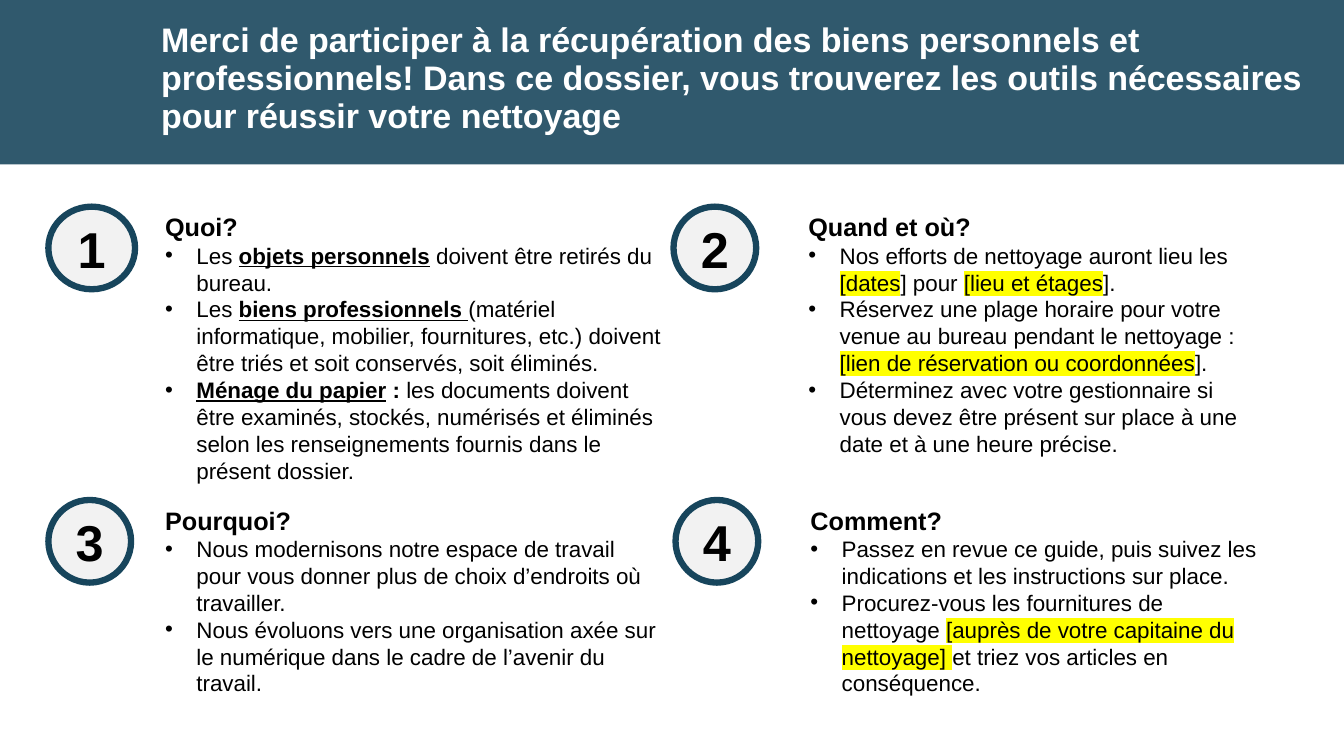
from lxml import etree
from pptx import Presentation
from pptx.dml.color import RGBColor
from pptx.enum.shapes import MSO_SHAPE
from pptx.enum.text import MSO_ANCHOR, MSO_AUTO_SIZE, PP_ALIGN
from pptx.oxml.ns import qn
from pptx.util import Inches, Pt

RECT, OVAL = MSO_SHAPE.RECTANGLE, MSO_SHAPE.OVAL
MIDDLE, TOP = MSO_ANCHOR.MIDDLE, MSO_ANCHOR.TOP
CENTER, GROW = PP_ALIGN.CENTER, MSO_AUTO_SIZE.SHAPE_TO_FIT_TEXT

TEAL = RGBColor(0x17, 0x45, 0x5C)
PALE = RGBColor(0xF2, 0xF2, 0xF2)
WHITE = RGBColor(0xFF, 0xFF, 0xFF)
BLACK = RGBColor(0x00, 0x00, 0x00)
YELLOW = RGBColor(0xFF, 0xFF, 0x00)

# Text formats
BANNER = {"size": Pt(24.3), "bold": True}
NUMBER = {"size": Pt(36), "bold": True}
HEAD = {"size": Pt(18), "bold": True}
BODY = {"size": Pt(16), "bold": False}
STRONG = {"size": Pt(16), "bold": True}
KEY = {"size": Pt(16), "bold": True, "underline": True}
MARK = {"size": Pt(16), "bold": False, "mark": True}

TITLE = ("Merci de participer à la récupération des biens personnels et "
         "professionnels! Dans ce dossier, vous trouverez les outils "
         "nécessaires pour réussir votre nettoyage")

# Number, circle (left, width), text (left, width, height), top, heading, bullets
PARTS = [
    ("1", (0.48, 0.86), (1.54, 5.16, 2.83), 2.05, "Quoi?", [
        [("Les ", BODY), ("objets personnels", KEY),
         (" doivent être retirés du bureau.", BODY)],
        [("Les ", BODY), ("biens professionnels ", KEY),
         ("(matériel informatique, mobilier, fournitures, etc.) doivent "
          "être triés et soit conservés, soit éliminés.", BODY)],
        [("Ménage du papier", KEY), (" :", STRONG),
         (" les documents doivent être examinés, stockés, numérisés et "
          "éliminés selon les renseignements fournis dans le présent "
          "dossier.", BODY)],
    ]),
    ("2", (6.68, 0.82), (7.92, 4.67, 2.83), 2.05, "Quand et où?", [
        [("Nos efforts de nettoyage auront lieu les ", BODY),
         ("[dates", MARK), ("] pour ", BODY),
         ("[lieu et étages", MARK), ("].", BODY)],
        [("Réservez une plage horaire pour votre venue au bureau pendant "
          "le nettoyage : ", BODY),
         ("[lien de réservation ou coordonnées", MARK), ("].", BODY)],
        [("Déterminez avec votre gestionnaire si vous devez être présent "
          "sur place à une date et à une heure précise.", BODY)],
    ]),
    ("3", (0.48, 0.82), (1.54, 5.1, 2.02), 4.96, "Pourquoi?", [
        [("Nous modernisons notre espace de travail pour vous donner plus "
          "de choix d’endroits où travailler.", BODY)],
        [("Nous évoluons vers une organisation axée sur le numérique dans "
          "le cadre de l’avenir du travail.", BODY)],
    ]),
    ("4", (6.7, 0.82), (7.94, 4.67, 2.29), 4.96, "Comment?", [
        [("Passez en revue ce guide, puis suivez les indications et les "
          "instructions sur place.", BODY)],
        [("Procurez-vous les fournitures de nettoyage ", BODY),
         ("[auprès de votre capitaine du nettoyage] ", MARK),
         ("et triez vos articles en conséquence.", BODY)],
    ]),
]


def add_run(para, text, style, color=BLACK):
    run = para.add_run()
    run.text = text
    run.font.name = "Arial"
    run.font.color.rgb = color
    for name, value in style.items():
        if name != "mark":
            setattr(run.font, name, value)
    if style.get("mark"):
        light = etree.Element(qn("a:highlight"))
        etree.SubElement(light, qn("a:srgbClr"), val=str(YELLOW))
        run.font.fill  # the highlight must follow the fill
        run._r.rPr.find(qn("a:solidFill")).addnext(light)


def add_bullet(para):
    props = para._p.get_or_add_pPr()
    props.set("marL", str(Inches(0.31)))
    props.set("indent", str(-Inches(0.31)))
    etree.SubElement(props, qn("a:buFont"), typeface="Arial")
    etree.SubElement(props, qn("a:buChar"), char="•")


def add_form(slide, kind, box, fill):
    form = slide.shapes.add_shape(kind, *map(Inches, box))
    form.shadow.inherit = False
    form.fill.solid()
    form.fill.fore_color.rgb = fill
    return form


def add_box(slide, box, anchor):
    frame = slide.shapes.add_textbox(*map(Inches, box)).text_frame
    frame.word_wrap = True
    frame.vertical_anchor = anchor
    return frame


def add_banner(slide):
    band = add_form(slide, RECT, (0, -0.01, 13.33, 1.64), TEAL)
    band.line.fill.background()
    color = band._element.spPr.find(qn("a:solidFill"))[0]
    etree.SubElement(color, qn("a:alpha"), val="89000")
    para = add_box(slide, (1.5, 0.33, 11.7, 0.91), MIDDLE).paragraphs[0]
    para.line_spacing = 0.93
    add_run(para, TITLE, BANNER, WHITE)


def add_badge(slide, label, left, top, width):
    badge = add_form(slide, OVAL, (left, top, width, 0.82), PALE)
    badge.line.color.rgb = TEAL
    badge.line.width = Pt(4.5)
    badge.text_frame.vertical_anchor = MIDDLE
    para = badge.text_frame.paragraphs[0]
    para.alignment = CENTER
    add_run(para, label, NUMBER)


def add_part(slide, label, badge, text, top, head, items):
    add_badge(slide, label, badge[0], top, badge[1])
    left, width, height = text
    frame = add_box(slide, (left, top, width, height), TOP)
    frame.auto_size = GROW
    add_run(frame.paragraphs[0], head, HEAD)
    for item in items:
        para = frame.add_paragraph()
        add_bullet(para)
        for words, style in item:
            add_run(para, words, style)


def main():
    deck = Presentation()
    deck.slide_width, deck.slide_height = Inches(13.33), Inches(7.5)
    slide = deck.slides.add_slide(deck.slide_layouts[6])
    # Title band
    add_banner(slide)
    # Four numbered parts
    for part in PARTS:
        add_part(slide, *part)
    deck.save("out.pptx")


if __name__ == "__main__":
    main()
